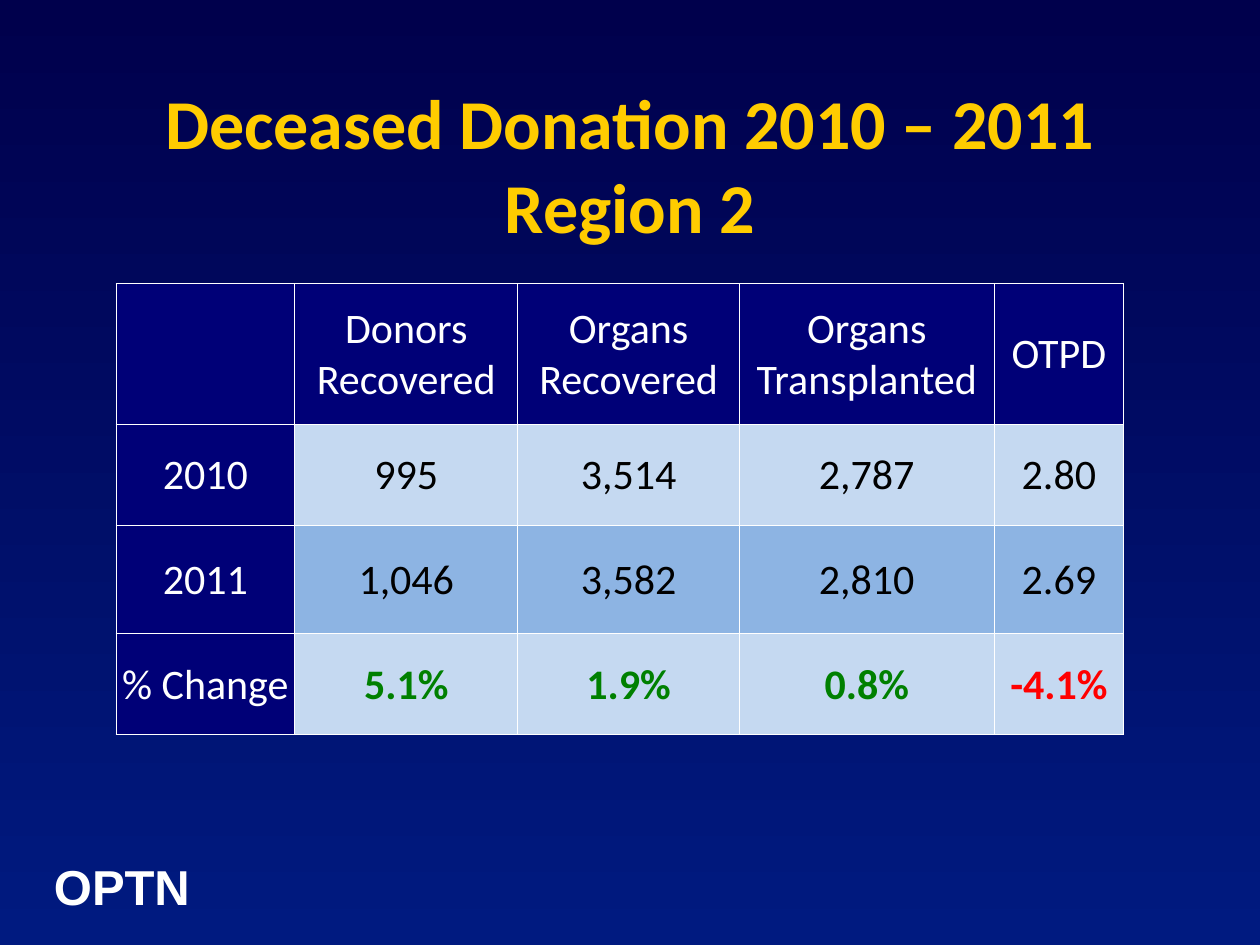
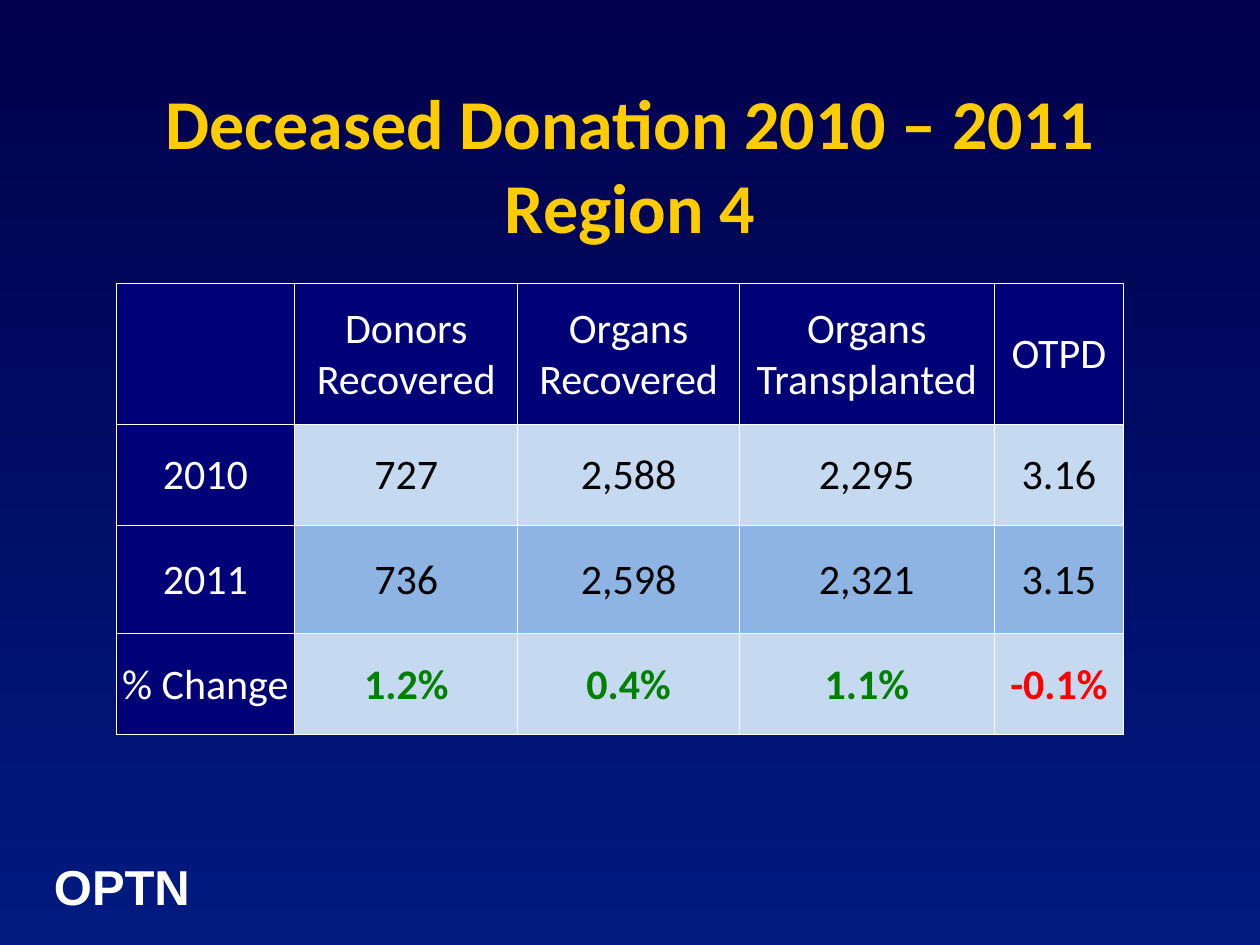
from dataclasses import dataclass

from lxml import etree
from pptx import Presentation
from pptx.dml.color import RGBColor
from pptx.enum import text
from pptx.oxml import ns
from pptx.util import Inches, Pt

TITLE_SIZE = 40
NAVY, PALE, BLUE = "000077", "C5D9F1", "8DB4E3"
WHITE, BLACK, GOLD, GREEN, RED = "FFFFFF", "000000", "FFCC00", "008000", "FF0000"
BACKGROUND = ("00004C", "001A80")

HEADERS = ("", "Donors Recovered", "Organs Recovered", "Organs Transplanted", "OTPD")
ROW_LABELS = ("2010", "2011", "% Change")
ROW_FILLS = (PALE, BLUE, PALE)
COLUMN_WIDTHS = (1.42, 1.77, 1.76, 2.02, 1.03)
ROW_HEIGHTS = (1.12, 0.8, 0.86, 0.8)


@dataclass(frozen=True)
class Region:
    number: int
    rows: tuple[tuple[str, ...], ...]


REGIONS = (
    Region(2, (
        ("995", "3,514", "2,787", "2.80"),
        ("1,046", "3,582", "2,810", "2.69"),
        ("5.1%", "1.9%", "0.8%", "-4.1%"),
    )),
    Region(4, (
        ("727", "2,588", "2,295", "3.16"),
        ("736", "2,598", "2,321", "3.15"),
        ("1.2%", "0.4%", "1.1%", "-0.1%"),
    )),
)


def rgb(value: str) -> RGBColor:
    return RGBColor.from_string(value)


def write(tf, content: str, *, size: float = 24, color: str = WHITE, bold: bool = False,
          font: str = "Calibri", align=text.PP_ALIGN.CENTER) -> None:
    p = tf.paragraphs[0]
    p.text = content
    p.alignment = align
    for r in p.runs:
        r.font.name = font
        r.font.size = Pt(size)
        r.font.bold = bold
        r.font.color.rgb = rgb(color)


def style_master(prs) -> None:
    master = prs.slide_master
    fill = master.background.fill
    fill.gradient()
    fill.gradient_angle = 270
    for stop, color in zip(fill.gradient_stops, BACKGROUND):
        stop.color.rgb = rgb(color)
    title_style = master.element.find(".//" + ns.qn("p:titleStyle"))
    title_style.find(".//" + ns.qn("a:defRPr")).set("sz", str(TITLE_SIZE * 100))


def add_title(s, content: str) -> None:
    sp = s.shapes.title
    sp.left, sp.top, sp.width, sp.height = map(Inches, (0.75, 0.67, 8.5, 1.25))
    tf = sp.text_frame
    tf.auto_size = text.MSO_AUTO_SIZE.NONE
    tf.vertical_anchor = text.MSO_ANCHOR.MIDDLE
    write(tf, content, size=TITLE_SIZE, color=GOLD, bold=True)


def add_footer(s) -> None:
    tf = s.shapes.add_textbox(*map(Inches, (0.33, 6.75, 1.31, 0.57))).text_frame
    tf.word_wrap = True
    write(tf, "OPTN", size=28, bold=True, font="Arial", align=text.PP_ALIGN.LEFT)


def add_borders(cell) -> None:
    tc_pr = cell._tc.get_or_add_tcPr()
    for index, side in enumerate(("lnL", "lnR", "lnT", "lnB")):
        line = etree.Element(ns.qn(f"a:{side}"), w=str(Pt(0.5)))
        solid = etree.SubElement(line, ns.qn("a:solidFill"))
        etree.SubElement(solid, ns.qn("a:srgbClr"), val=WHITE)
        tc_pr.insert(index, line)


def fill_cell(cell, content: str, fill: str, color: str, bold: bool) -> None:
    cell.fill.solid()
    cell.fill.fore_color.rgb = rgb(fill)
    cell.vertical_anchor = text.MSO_ANCHOR.MIDDLE
    cell.margin_left = cell.margin_right = cell.margin_top = Inches(0.01)
    cell.margin_bottom = 0
    write(cell.text_frame, content, color=color, bold=bold)
    add_borders(cell)


def add_donation_table(s, region: Region) -> None:
    frame = s.shapes.add_table(
        len(ROW_HEIGHTS), len(COLUMN_WIDTHS), Inches(0.92), Inches(2.25),
        Inches(sum(COLUMN_WIDTHS)), Inches(sum(ROW_HEIGHTS)))
    table = frame.table
    for column, width in zip(table.columns, COLUMN_WIDTHS):
        column.width = Inches(width)
    for row, height in zip(table.rows, ROW_HEIGHTS):
        row.height = Inches(height)

    for col, header in enumerate(HEADERS):
        fill_cell(table.cell(0, col), header, NAVY, WHITE, False)
    body = zip(ROW_LABELS, ROW_FILLS, region.rows)
    for row, (label, fill, values) in enumerate(body, 1):
        fill_cell(table.cell(row, 0), label, NAVY, WHITE, False)
        for col, value in enumerate(values, 1):
            is_change = value.endswith("%")
            change_color = RED if value.startswith("-") else GREEN
            fill_cell(table.cell(row, col), value, fill,
                      change_color if is_change else BLACK, is_change)


def main() -> None:
    prs = Presentation()
    prs.slide_width, prs.slide_height = Inches(10), Inches(7.5)
    style_master(prs)
    for region in REGIONS:
        s = prs.slides.add_slide(prs.slide_layouts.get_by_name("Title Only"))
        add_footer(s)
        add_title(s, f"Deceased Donation 2010 – 2011\nRegion {region.number}")
        add_donation_table(s, region)
    prs.save("out.pptx")


if __name__ == "__main__":
    main()
